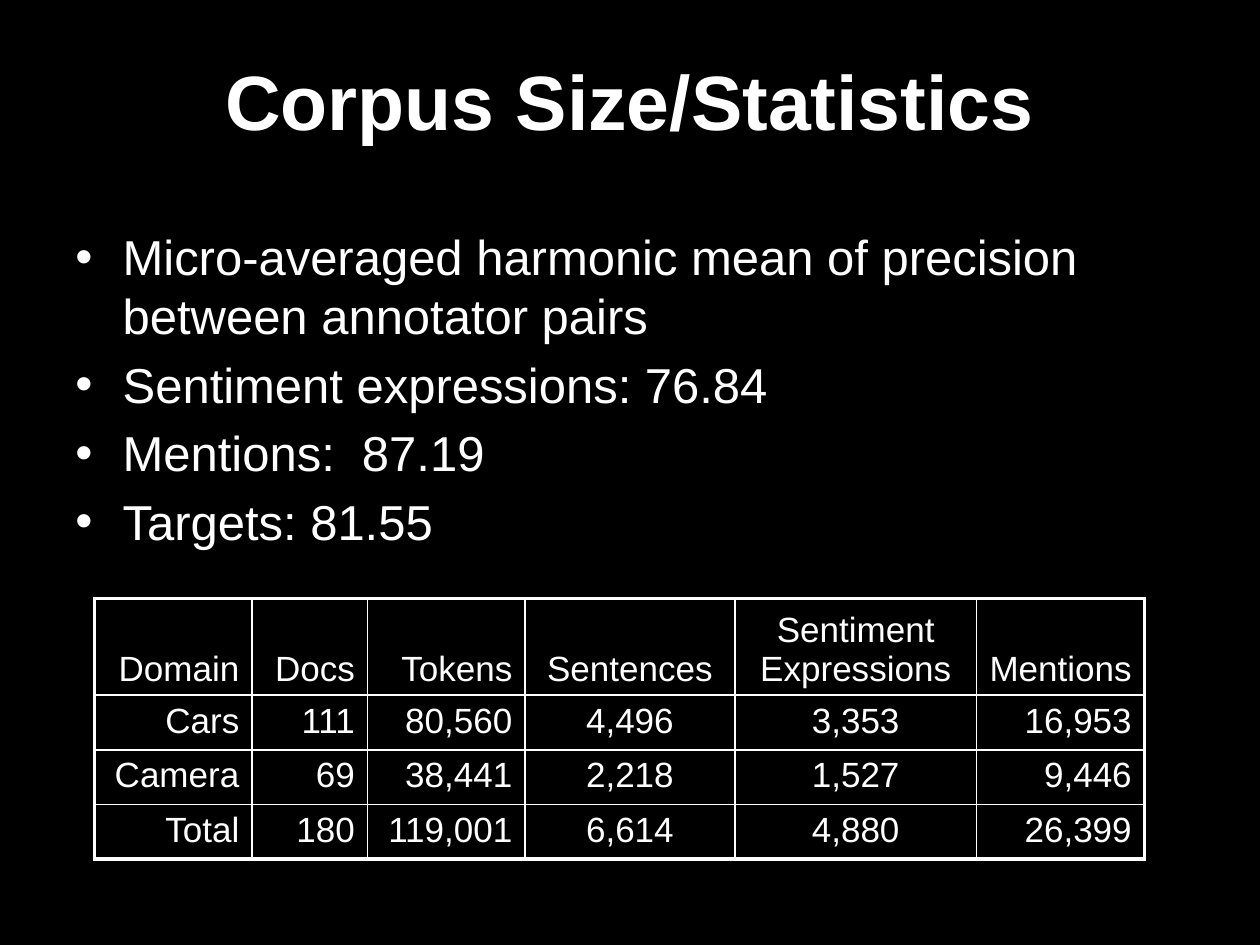
"""Build the corpus statistics slide."""
from dataclasses import dataclass
from typing import Any

from lxml import etree
from pptx import Presentation
from pptx import util as u
from pptx.dml.color import RGBColor
from pptx.enum import text
from pptx.oxml import ns

BLACK = RGBColor(0, 0, 0)
WHITE = RGBColor(255, 255, 255)
LEFT, CENTER, RIGHT = text.PP_ALIGN.LEFT, text.PP_ALIGN.CENTER, text.PP_ALIGN.RIGHT
TOP, MIDDLE, BOTTOM = text.MSO_ANCHOR.TOP, text.MSO_ANCHOR.MIDDLE, text.MSO_ANCHOR.BOTTOM

BULLETS = [
    "Micro-averaged harmonic mean of precision between annotator pairs",
    "Sentiment expressions: 76.84",
    "Mentions:  87.19",
    "Targets: 81.55",
]
ROWS = [
    ["Domain", "Docs", "Tokens", "Sentences", "Sentiment Expressions", "Mentions"],
    ["Cars", "111", "80,560", "4,496", "3,353", "16,953"],
    ["Camera", "69", "38,441", "2,218", "1,527", "9,446"],
    ["Total", "180", "119,001", "6,614", "4,880", "26,399"],
]
COLUMN_WIDTHS = [90, 66, 90, 120, 138, 96]
COLUMN_ALIGNS = [RIGHT, RIGHT, RIGHT, CENTER, CENTER, RIGHT]
ROW_HEIGHTS = [51, 29, 29, 29]


def write(p, content, *, font="Arial", size=20, color=WHITE, bold=False, align=LEFT, before=0):
    p.alignment = align
    p.space_before = u.Pt(before)
    r = p.add_run()
    r.text = content
    r.font.name = font
    r.font.size = u.Pt(size)
    r.font.bold = bold
    r.font.color.rgb = color


def add_bullet(p, indent):
    pPr = p._p.get_or_add_pPr()
    pPr.set("marL", str(u.Pt(indent)))
    pPr.set("indent", str(-u.Pt(indent)))
    etree.SubElement(pPr, ns.qn("a:buFont"), typeface="Arial")
    etree.SubElement(pPr, ns.qn("a:buChar"), char="•")


def add_border(cell, side, width, color):
    ln = etree.Element(ns.qn(f"a:ln{side}"), w=str(u.Pt(width)))
    fill = etree.SubElement(ln, ns.qn("a:solidFill"))
    etree.SubElement(fill, ns.qn("a:srgbClr"), val=str(color))
    return ln


@dataclass
class Deck:
    slide: Any
    ink: RGBColor = WHITE
    paper: RGBColor = BLACK
    inner_line: float = 1
    outer_line: float = 2.25

    def background(self):
        fill = self.slide.background.fill
        fill.solid()
        fill.fore_color.rgb = self.paper

    def text_box(self, x, y, w, h, anchor=TOP):
        sp = self.slide.shapes.add_textbox(u.Pt(x), u.Pt(y), u.Pt(w), u.Pt(h))
        tf = sp.text_frame
        tf.word_wrap = True
        tf.vertical_anchor = anchor
        return tf

    def title(self, content, x, y, w, h):
        tf = self.text_box(x, y, w, h, MIDDLE)
        write(tf.paragraphs[0], content, size=44, bold=True, color=self.ink, align=CENTER)

    def bullets(self, items, x, y, w, h):
        tf = self.text_box(x, y, w, h)
        for i, item in enumerate(items):
            p = tf.add_paragraph() if i else tf.paragraphs[0]
            write(p, item, size=28, color=self.ink, before=5.6)
            add_bullet(p, 27)

    def table(self, rows, x, y, widths, heights, aligns):
        frame = self.slide.shapes.add_table(
            len(rows), len(widths), u.Pt(x), u.Pt(y), u.Pt(sum(widths)), u.Pt(sum(heights)))
        table = frame.table
        for column, width in zip(table.columns, widths):
            column.width = u.Pt(width)
        for row, height in zip(table.rows, heights):
            row.height = u.Pt(height)
        for i, values in enumerate(rows):
            for j, value in enumerate(values):
                cell = table.cell(i, j)
                cell.vertical_anchor = TOP if i else BOTTOM
                write(cell.text_frame.paragraphs[0], value, color=self.ink, align=aligns[j])
                outer = {"L": j == 0, "R": j == len(widths) - 1,
                         "T": i == 0, "B": i == len(rows) - 1}
                tcPr = cell._tc.get_or_add_tcPr()
                for side, is_outer in outer.items():
                    width = self.outer_line if is_outer else self.inner_line
                    tcPr.append(add_border(cell, side, width, self.ink))
                cell.fill.background()


def main():
    prs = Presentation()
    prs.slide_width, prs.slide_height = u.Pt(720), u.Pt(540)
    deck = Deck(prs.slides.add_slide(prs.slide_layouts[6]))
    deck.background()
    deck.title("Corpus Size/Statistics", 36, 12, 648, 90)
    deck.bullets(BULLETS, 36, 126, 666, 228)
    deck.table(ROWS, 54, 342, COLUMN_WIDTHS, ROW_HEIGHTS, COLUMN_ALIGNS)
    prs.save("out.pptx")


if __name__ == "__main__":
    main()
